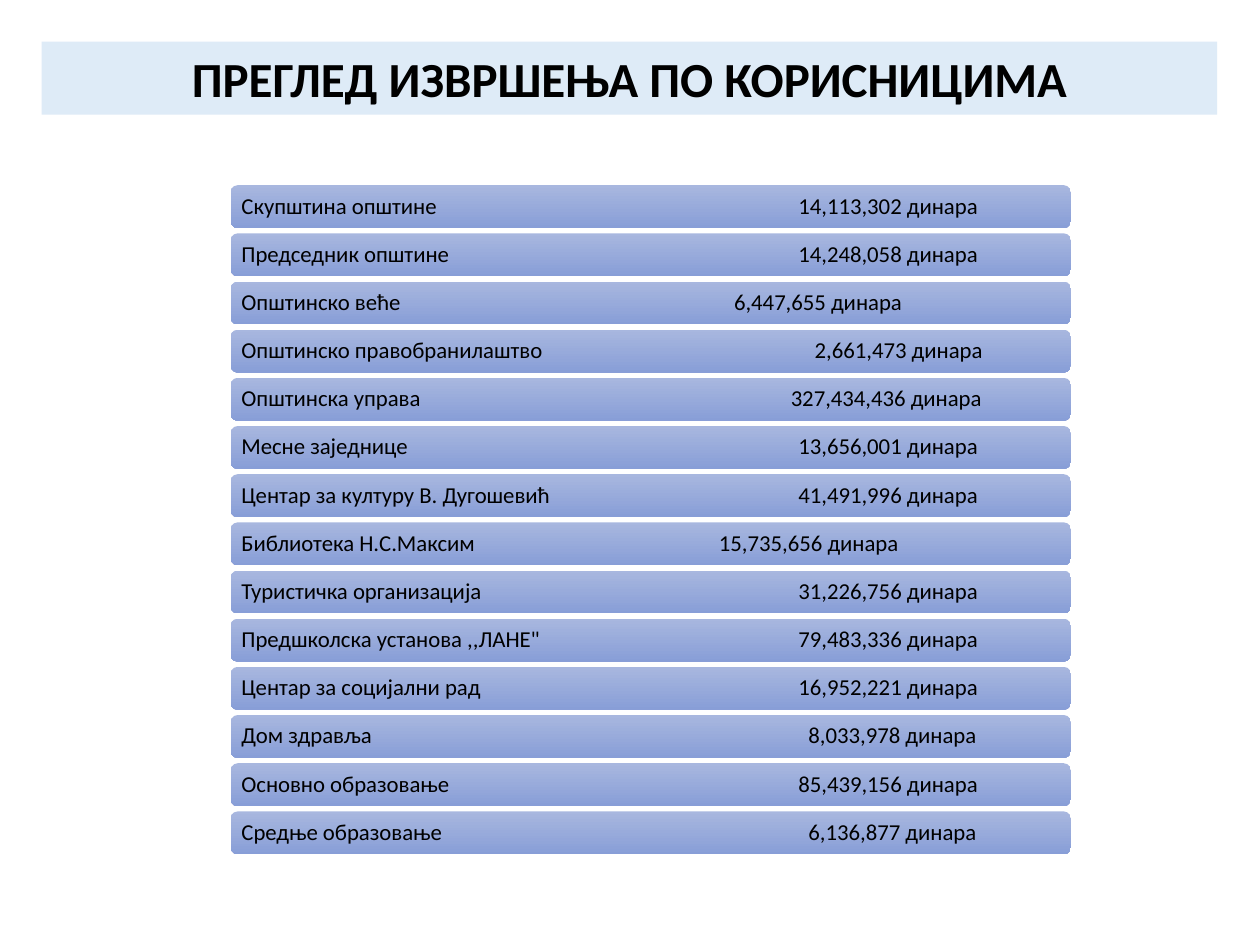
from lxml import etree
from pptx import Presentation
from pptx import util as u
from pptx.dml.color import RGBColor
from pptx.enum import shapes, text
from pptx.oxml.ns import qn

COLORS = {"band": "DEEBF7", "bar_top": "A8B7DF", "bar_bottom": "889ED7", "ink": "000000"}

BUDGET_USERS = [
    ("Скупштина општине", "14,113,302", 4.42),
    ("Председник општине", "14,248,058", 4.42),
    ("Општинско веће", "6,447,655", 3.91),
    ("Општинско правобранилаштво", "2,661,473", 4.55),
    ("Општинска управа", "327,434,436", 4.36),
    ("Месне заједнице", "13,656,001", 4.42),
    ("Центар за културу В. Дугошевић", "41,491,996", 4.42),
    ("Библиотека Н.С.Максим", "15,735,656", 3.79),
    ("Туристичка организација", "31,226,756", 4.42),
    ("Предшколска установа ,,ЛАНЕ\"", "79,483,336", 4.42),
    ("Центар за социјални рад", "16,952,221", 4.42),
    ("Дом здравља", "8,033,978", 4.5),
    ("Основно образовање", "85,439,156", 4.42),
    ("Средње образовање", "6,136,877", 4.5),
]


def rgb(name):
    return RGBColor.from_string(COLORS[name])


class Deck:
    font = "Calibri"

    def __init__(self, width, height):
        self.prs = Presentation()
        self.prs.slide_width = u.Inches(width)
        self.prs.slide_height = u.Inches(height)
        self.s = self.prs.slides.add_slide(self.prs.slide_layouts[5])

    def format_text(self, p, **values):
        p.line_spacing = 0.9
        for key, value in {"name": self.font, **values}.items():
            setattr(p.font, key, value)
        p.font.color.rgb = rgb("ink")

    def title(self, words, left, top, width, height):
        sp = self.s.shapes.title
        place = {"left": left, "top": top, "width": width, "height": height}
        for key, value in place.items():
            setattr(sp, key, u.Inches(value))
        sp.fill.solid()
        sp.fill.fore_color.rgb = rgb("band")
        tf = sp.text_frame
        tf.text = words
        tf.auto_size = text.MSO_AUTO_SIZE.NONE
        tf.vertical_anchor = text.MSO_ANCHOR.BOTTOM
        p = tf.paragraphs[0]
        p.alignment = text.PP_ALIGN.CENTER
        self.format_text(p, size=u.Pt(28), bold=True)

    def bar(self, label, amount, tab, left, top, width, height):
        box = [u.Inches(v) for v in (left, top, width, height)]
        sp = self.s.shapes.add_shape(shapes.MSO_SHAPE.ROUNDED_RECTANGLE, *box)
        sp.shadow.inherit = False
        sp.line.fill.background()
        sp.fill.gradient()
        sp.fill.gradient_angle = 270
        for stop, name in zip(sp.fill.gradient_stops, ("bar_top", "bar_bottom")):
            stop.color.rgb = rgb(name)
        tf = sp.text_frame
        margins = {"left": 0.07, "right": 0.07, "top": 0.05, "bottom": 0.05}
        for side, value in margins.items():
            setattr(tf, f"margin_{side}", u.Inches(value))
        tf.vertical_anchor = text.MSO_ANCHOR.MIDDLE
        p = tf.paragraphs[0]
        p.text = f"{label}\t{amount} динара"
        p.alignment = text.PP_ALIGN.LEFT
        tabs = etree.SubElement(p._p.get_or_add_pPr(), qn("a:tabLst"))
        etree.SubElement(tabs, qn("a:tab"), pos=str(u.Inches(tab)), algn="l")
        self.format_text(p, size=u.Pt(13))


def main():
    deck = Deck(10, 7.5)
    deck.title("ПРЕГЛЕД ИЗВРШЕЊА ПО КОРИСНИЦИМА", 0.33, 0.33, 9.33, 0.58)
    first, last = 1.47, 6.44
    pitch = (last - first) / (len(BUDGET_USERS) - 1)
    for i, (label, amount, tab) in enumerate(BUDGET_USERS):
        deck.bar(label, amount, tab, 1.83, first + i * pitch, 6.67, 0.34)
    deck.prs.save("out.pptx")


if __name__ == "__main__":
    main()
